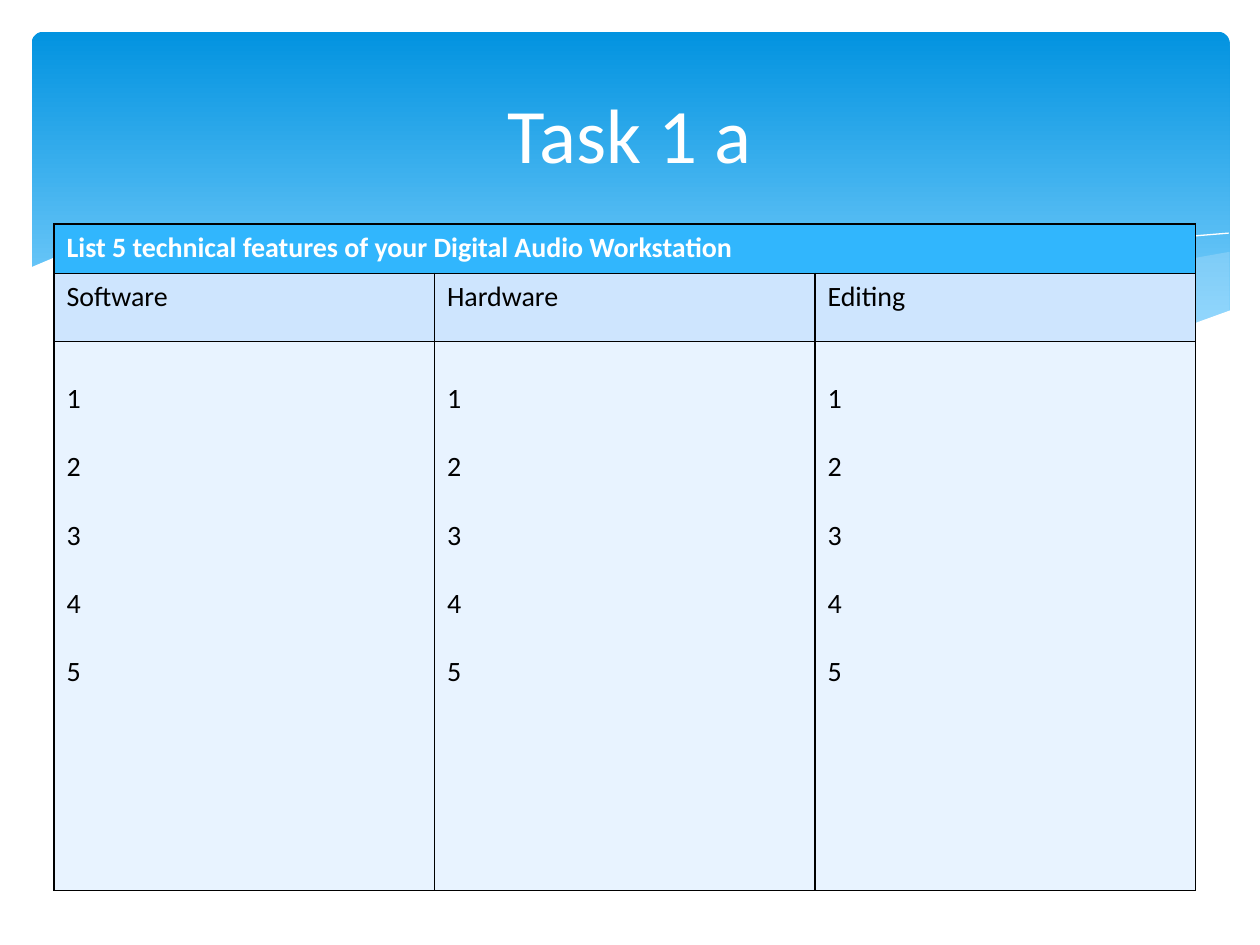
from lxml import etree
from pptx import Presentation
from pptx.dml.color import RGBColor
from pptx.enum.shapes import MSO_SHAPE
from pptx.enum.text import MSO_ANCHOR, PP_ALIGN
from pptx.oxml.ns import qn
from pptx.util import Cm, Pt

ROUNDED_RECTANGLE = MSO_SHAPE.ROUNDED_RECTANGLE
MIDDLE = MSO_ANCHOR.MIDDLE
CENTER = PP_ALIGN.CENTER

FONT = "Calibri"
WHITE = RGBColor(0xFF, 0xFF, 0xFF)
BLACK = RGBColor(0x00, 0x00, 0x00)
BANNER_TOP = RGBColor(0x02, 0x93, 0xE0)
BANNER_BOTTOM = RGBColor(0x83, 0xD3, 0xFE)
WAVE_BLUE = RGBColor(0xC6, 0xE7, 0xFC)
HEADER_BLUE = RGBColor(0x31, 0xB6, 0xFD)
SUBHEADER_BLUE = RGBColor(0xCE, 0xE5, 0xFE)
BODY_BLUE = RGBColor(0xE8, 0xF3, 0xFF)

# Wave outlines, in centimetres
RIGHT_WAVE = [
    (24.77, 5.08), (23.75, 5.26), (21.87, 5.66), (19.79, 6.15), (16.79, 6.73),
    (18.26, 6.91), (19.84, 7.04), (21.21, 7.04), (22.38, 6.93), (23.57, 6.68),
    (24.1, 6.53), (24.79, 6.27), (24.79, 5.08),
]
LEFT_WAVE = [
    (22.68, 6.93), (20.5, 6.6), (17.93, 6.1), (15.98, 5.64), (14.45, 5.28),
    (13.06, 5.03), (11.81, 4.85), (10.13, 4.72), (8.74, 4.72), (7.26, 4.85),
    (9.19, 5.16), (11.4, 5.64), (13.46, 6.1), (15.27, 6.48), (17.27, 6.81),
    (19, 7.01), (20.5, 7.06), (21.77, 7.04),
]
FALLING_CURVE = [
    (7.85, 4.95), (8.74, 4.83), (10.19, 4.75), (11.91, 4.8), (13.54, 4.93),
    (15.44, 5.18), (17.65, 5.56), (20.19, 6.12), (23.04, 6.91),
]
RISING_CURVE = [
    (15.57, 6.53), (17.65, 5.97), (19.71, 5.49), (22, 5.05), (23.47, 4.83),
    (24.16, 4.75), (24.77, 4.7),
]
WHITE_WAVE = [
    (24.82, 6.25), (24.13, 6.5), (23.11, 6.78), (21.92, 6.96), (20.55, 7.04),
    (18.9, 6.96), (16.97, 6.73), (14.71, 6.35), (11.35, 5.59), (9.27, 5.13),
    (7.42, 4.83), (5.84, 4.7), (4.5, 4.67), (3.02, 4.75), (1.93, 4.95),
    (1.17, 5.16), (0.58, 5.41), (0.58, 8.36), (24.82, 8.36),
]

TITLE = "Task 1 a"
TABLE_HEADING = "List 5 technical features of your Digital Audio Workstation"
COLUMN_HEADINGS = ["Software", "Hardware", "Editing"]
NUMBERS = ["1", "2", "3", "4", "5"]
ROW_HEIGHTS = [Cm(0.99), Cm(1.37), Cm(11.07)]
COLUMN_WIDTH = Cm(7.67)
BLANK_LINE = Pt(19.5)


def add_banner(slide):
    banner = slide.shapes.add_shape(
        ROUNDED_RECTANGLE, Cm(0.64), Cm(0.64), Cm(24.15), Cm(6.86))
    banner.adjustments[0] = 0.034
    banner.shadow.inherit = False
    banner.line.fill.background()
    banner.fill.gradient()
    banner.fill.gradient_angle = 270
    top, bottom = banner.fill.gradient_stops
    top.color.rgb, top.position = BANNER_TOP, 0
    bottom.color.rgb, bottom.position = BANNER_BOTTOM, 0.9


def add_outline(slide, points, close):
    start, *rest = [(Cm(x), Cm(y)) for x, y in points]
    builder = slide.shapes.build_freeform(*start)
    builder.add_line_segments(rest, close=close)
    shape = builder.convert_to_shape()
    shape.shadow.inherit = False
    return shape


def add_wave(slide, points, color, opacity=100):
    wave = add_outline(slide, points, close=True)
    wave.line.fill.background()
    wave.fill.solid()
    wave.fill.fore_color.rgb = color
    if opacity < 100:
        color_element = wave._element.spPr.find(qn("a:solidFill"))[0]
        etree.SubElement(color_element, qn("a:alpha"), val=str(opacity * 1000))


def add_hairline(slide, points):
    hairline = add_outline(slide, points, close=False)
    hairline.fill.background()
    hairline.line.color.rgb = WHITE
    hairline.line.width = Pt(0)


def style_paragraph(paragraph, size, color, bold=False):
    font = paragraph.font
    font.name, font.size, font.bold = FONT, Pt(size), bold
    font.color.rgb = color


def add_title(slide):
    box = slide.shapes.add_textbox(Cm(1.27), Cm(0.94), Cm(22.86), Cm(3.48))
    box.text_frame.word_wrap = True
    box.text_frame.vertical_anchor = MIDDLE
    paragraph = box.text_frame.paragraphs[0]
    paragraph.text = TITLE
    paragraph.alignment = CENTER
    style_paragraph(paragraph, 44, WHITE)


def set_borders(cell):
    properties = cell._tc.get_or_add_tcPr()
    for side in ("lnL", "lnR", "lnT", "lnB"):
        line = etree.SubElement(properties, qn(f"a:{side}"), w=str(Pt(1)))
        fill = etree.SubElement(line, qn("a:solidFill"))
        etree.SubElement(fill, qn("a:srgbClr"), val=str(BLACK))


def fill_cell(cell, lines, background, color=BLACK, bold=False):
    cell.fill.solid()
    cell.fill.fore_color.rgb = background
    cell.text_frame.text = "\n".join(lines)
    for paragraph in cell.text_frame.paragraphs:
        style_paragraph(paragraph, 16, color, bold)


def add_feature_table(slide):
    column_count = len(COLUMN_HEADINGS)
    table = slide.shapes.add_table(
        len(ROW_HEIGHTS), column_count, Cm(1.09), Cm(4.52),
        COLUMN_WIDTH * column_count, sum(ROW_HEIGHTS)).table
    table.first_row = table.horz_banding = False
    for column in table.columns:
        column.width = COLUMN_WIDTH
    for row, height in zip(table.rows, ROW_HEIGHTS):
        row.height = height
    for cell in table.iter_cells():
        set_borders(cell)

    heading = table.cell(0, 0)
    heading.merge(table.cell(0, column_count - 1))
    fill_cell(heading, [TABLE_HEADING], HEADER_BLUE, WHITE, bold=True)
    for index, name in enumerate(COLUMN_HEADINGS):
        fill_cell(table.cell(1, index), [name], SUBHEADER_BLUE)
        body = table.cell(2, index)
        fill_cell(body, NUMBERS, BODY_BLUE)
        body.margin_top = Cm(0.13) + BLANK_LINE
        for paragraph in body.text_frame.paragraphs:
            paragraph.space_after = BLANK_LINE


def main():
    presentation = Presentation()
    presentation.slide_width = Cm(25.4)
    presentation.slide_height = Cm(19.05)
    slide = presentation.slides.add_slide(presentation.slide_layouts[6])
    add_banner(slide)
    add_wave(slide, RIGHT_WAVE, WAVE_BLUE, opacity=29)
    add_wave(slide, LEFT_WAVE, WAVE_BLUE, opacity=40)
    add_hairline(slide, FALLING_CURVE)
    add_hairline(slide, RISING_CURVE)
    add_wave(slide, WHITE_WAVE, WHITE)
    add_title(slide)
    add_feature_table(slide)
    presentation.save("out.pptx")


if __name__ == "__main__":
    main()
